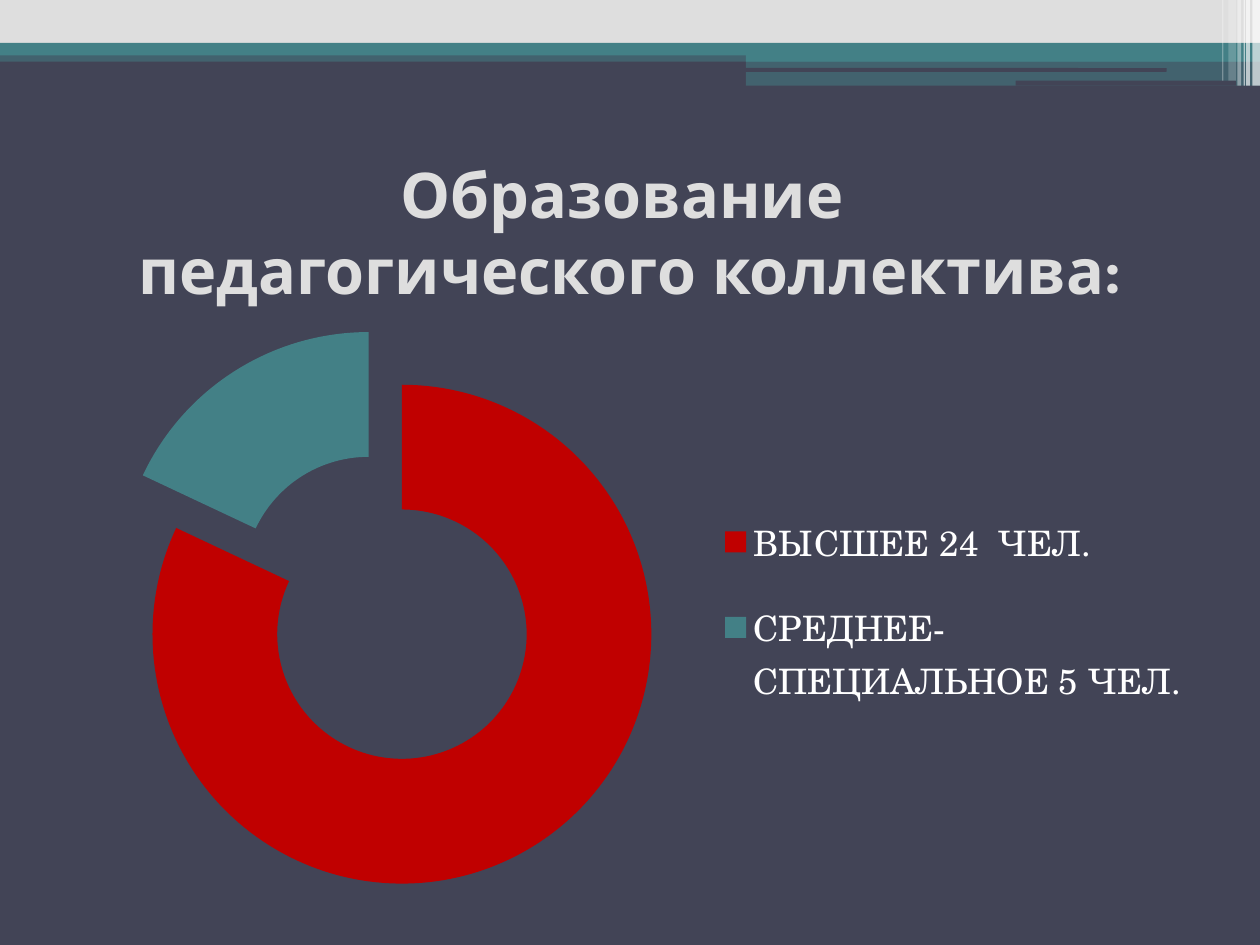
"""Build a slide with a doughnut chart of the teaching staff's education."""
from lxml.etree import SubElement
from pptx import Presentation
from pptx.chart.data import CategoryChartData
from pptx.dml.color import RGBColor
from pptx.enum.chart import XL_CHART_TYPE, XL_LEGEND_POSITION
from pptx.enum.shapes import MSO_SHAPE
from pptx.enum.text import MSO_ANCHOR, PP_ALIGN
from pptx.oxml.ns import qn
from pptx.util import Inches, Pt

SLATE = RGBColor(0x42, 0x44, 0x56)
TEAL = RGBColor(0x43, 0x80, 0x86)
PALE = RGBColor(0xDE, 0xDE, 0xDE)
WHITE = RGBColor(0xFF, 0xFF, 0xFF)
RED = RGBColor(0xC0, 0x00, 0x00)
WIDE, HIGH = 10, 7.5
COLS, ROWS = 100, 75


def style(font, name, size, color, bold=False):
    font.name, font.size, font.bold = name, Pt(size), bold
    font.color.rgb = color


def write(frame, text, align=PP_ALIGN.CENTER, anchor=MSO_ANCHOR.MIDDLE, **look):
    frame.text = text
    frame.word_wrap = True
    frame.vertical_anchor = anchor
    for par in frame.paragraphs:
        par.alignment = align
        for run in par.runs:
            style(run.font, **look)


def settle(legend, **share):
    node = legend._element
    layout = node.find(qn("c:layout"))
    if layout is None:
        layout = SubElement(node, qn("c:layout"))
        node.find(qn("c:legendPos")).addnext(layout)
    manual = SubElement(layout, qn("c:manualLayout"))
    for side in "xy":
        SubElement(manual, qn(f"c:{side}Mode"), val="edge")
    for side, value in share.items():
        SubElement(manual, qn(f"c:{side}"), val=str(value))


class Deck:
    def __init__(self):
        self.show = Presentation()
        self.show.slide_width, self.show.slide_height = Inches(WIDE), Inches(HIGH)
        self.slide = self.show.slides.add_slide(self.show.slide_layouts[5])
        fill = self.slide.background.fill
        fill.solid()
        fill.fore_color.rgb = SLATE

    def place(self, col, row, cols, rows):
        x, y = WIDE / COLS, HIGH / ROWS
        return [Inches(n) for n in (col * x, row * y, cols * x, rows * y)]

    def bar(self, box, color, alpha=100, kind=MSO_SHAPE.RECTANGLE):
        shape = self.slide.shapes.add_shape(kind, *self.place(*box))
        shape.shadow.inherit = False
        shape.fill.solid()
        shape.fill.fore_color.rgb = color
        shape.line.fill.background()
        if alpha < 100:
            tone = shape.fill._xPr.find(qn("a:solidFill"))[0]
            SubElement(tone, qn("a:alpha"), val=str(alpha * 1000))

    def title(self, box, text, **look):
        head = self.slide.shapes.title
        head.left, head.top, head.width, head.height = self.place(*box)
        write(head.text_frame, text, **look)

    def ring(self, box, parts, burst, font):
        data = CategoryChartData()
        data.categories = [name for name, _, _ in parts]
        data.add_series("Series 1", [value for _, value, _ in parts])
        chart = self.slide.shapes.add_chart(
            XL_CHART_TYPE.DOUGHNUT, *self.place(*box), data).chart
        style(chart.font, font, 10, WHITE)
        chart.has_title = False
        chart.has_legend = True
        chart.legend.position = XL_LEGEND_POSITION.RIGHT
        chart.legend.include_in_layout = False
        style(chart.legend.font, font, 20, WHITE)
        settle(chart.legend, x=0.57, y=0.29, w=0.43, h=0.43)
        plot = chart.plots[0]
        plot.vary_by_categories = True
        plot._element.find(qn("c:holeSize")).set("val", "50")
        for i, (_, _, color) in enumerate(parts):
            look = plot.series[0].points[i].format
            look.fill.solid()
            look.fill.fore_color.rgb = color
            look.line.fill.background()
        series = plot.series[0]._element
        push = SubElement(series, qn("c:explosion"), val=str(burst))
        series.find(qn("c:dPt")).addprevious(push)


def main():
    deck = Deck()
    for box, color, alpha in (
        ((0, 4, 100, 0.9), TEAL, 50),
        ((0, 0, 100, 3.4), PALE, 100),
        ((0, 3.4, 100, 1), TEAL, 100),
        ((59.2, 3.9, 40.8, 1), TEAL, 100),
        ((59.2, 4.8, 40.8, 2), TEAL, 50),
    ):
        deck.bar(box, color, alpha)
    for box in ((59.1, 5.4, 33.5, 0.3), (80.6, 6.4, 17.5, 0.4)):
        deck.bar(box, SLATE, kind=MSO_SHAPE.ROUNDED_RECTANGLE)
    for col, cols, rows, alpha in (
        (99.4, 0.6, 6.8, 65), (98.9, 0.3, 6.8, 65), (98.7, 0.1, 6.8, 60),
        (98.2, 0.3, 6.8, 40), (97.5, 0.6, 6.4, 20), (97, 0.1, 6.4, 30),
    ):
        deck.bar((col, 0, cols, rows), WHITE, alpha)
    deck.title((5, 12.5, 90, 11.7), "Образование \vпедагогического коллектива:",
               name="Karla", size=36, color=PALE, bold=True)
    parts = (("ВЫСШЕЕ 24  ЧЕЛ.", 82, RED),
             ("СРЕДНЕЕ-СПЕЦИАЛЬНОЕ 5 ЧЕЛ.", 18, TEAL))
    deck.ring((5, 24.6, 90, 47.3), parts, burst=25, font="TeX Gyre Schola")
    deck.show.save("out.pptx")


if __name__ == "__main__":
    main()
